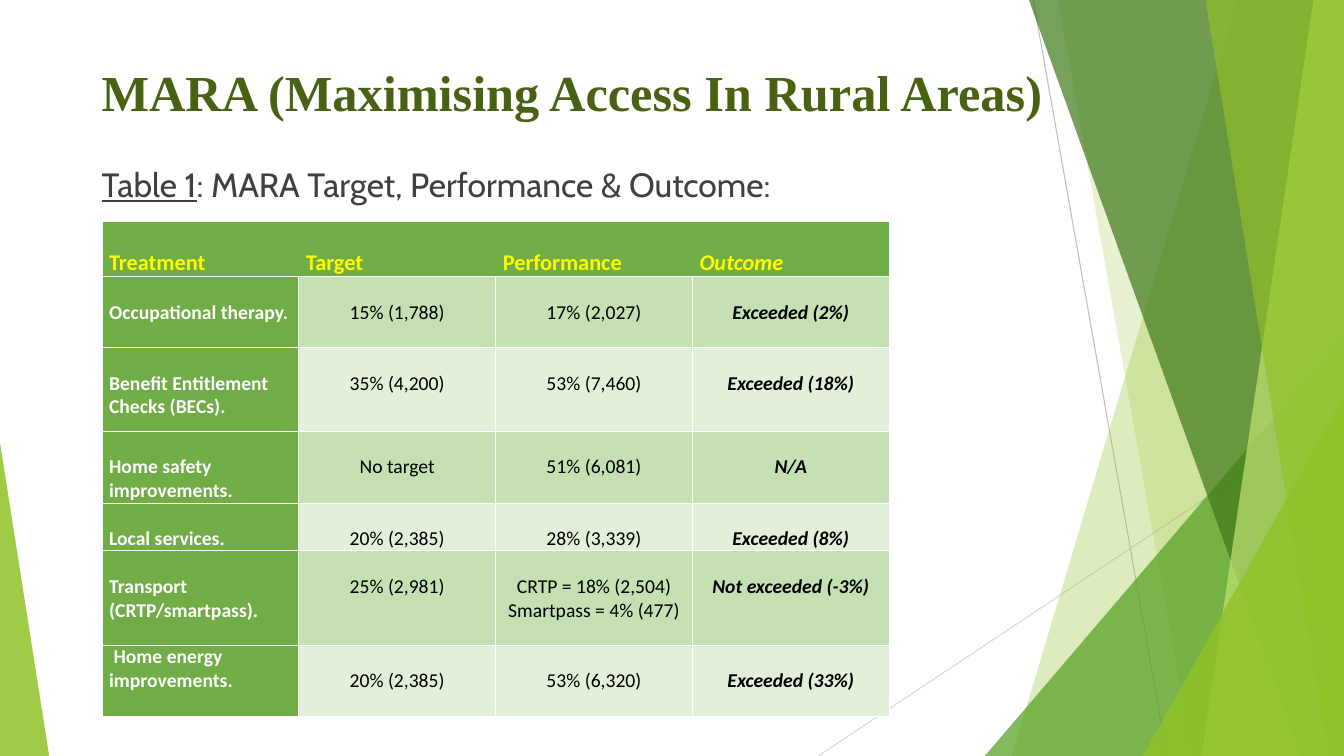
from lxml.etree import SubElement
from pptx import Presentation
from pptx.dml.color import RGBColor
from pptx.enum.shapes import MSO_CONNECTOR as Connector, MSO_SHAPE as Shape
from pptx.enum.text import PP_ALIGN as Align
from pptx.oxml.ns import qn
from pptx.util import Cm, Pt

WIDTH, HEIGHT = 33.87, 19.05
LIME, GREEN, FOREST, PALE = "90C226", "54A021", "3F7819", "C0E474"
LABEL_FILL, BAND_FILLS = "70AD47", ("C5E0B3", "E2EFD9")

HEADINGS = ["Treatment", "Target", "Performance", "Outcome"]
RESULTS = [
    ["Occupational therapy.", "15% (1,788)", "17% (2,027)", "Exceeded (2%)"],
    ["Benefit Entitlement Checks (BECs).", "35% (4,200)", "53% (7,460)", "Exceeded (18%)"],
    ["Home safety improvements.", "No target", "51% (6,081)", "N/A"],
    ["Local services.", "20% (2,385)", "28% (3,339)", "Exceeded (8%)"],
    ["Transport (CRTP/smartpass).", "25% (2,981)",
     "CRTP = 18% (2,504)\nSmartpass = 4% (477)", "Not exceeded (-3%)"],
    [" Home energy improvements.", "20% (2,385)", "53% (6,320)", "Exceeded (33%)"],
]
ROW_HEIGHTS = [1.38, 1.79, 2.11, 1.81, 1.2, 2.38, 1.79]
COLUMN_WIDTH = 4.96


def colour(hex_code):
    return RGBColor.from_string(hex_code)


def write(paragraph, text, size, font, hex_code, bold=False, italic=False, underline=False):
    run = paragraph.add_run()
    run.text = text
    run.font.size, run.font.name = Pt(size), font
    run.font.bold, run.font.italic, run.font.underline = bold, italic, underline
    run.font.color.rgb = colour(hex_code)


def add_text_area(slide, left, top, width, height, margin_top):
    frame = slide.shapes.add_textbox(Cm(left), Cm(top), Cm(width), Cm(height)).text_frame
    frame.word_wrap = True
    frame.margin_top = Cm(margin_top)
    return frame.paragraphs[0]


def paint(facet, hex_code, opacity):
    facet.shadow.inherit = False
    facet.line.fill.background()
    facet.fill.solid()
    facet.fill.fore_color.rgb = colour(hex_code)
    tint = facet.fill._xPr.find(qn("a:solidFill"))[0]
    SubElement(tint, qn("a:alpha"), val=str(opacity * 1000))


def add_band(slide, top_x, bottom_x, hex_code, opacity):
    """Full-height facet from a slanted left edge to the slide's right edge."""
    outline = slide.shapes.build_freeform(Cm(top_x), 0)
    corners = [(WIDTH, 0), (WIDTH, HEIGHT), (bottom_x, HEIGHT)]
    outline.add_line_segments([(Cm(x), Cm(y)) for x, y in corners], close=True)
    paint(outline.convert_to_shape(), hex_code, opacity)


def add_corner(slide, left, top, width, peak, hex_code, opacity):
    """Triangle standing on the slide's bottom edge."""
    corner = slide.shapes.add_shape(
        Shape.ISOSCELES_TRIANGLE, Cm(left), Cm(top), Cm(width), Cm(HEIGHT - top))
    corner.adjustments[0] = peak
    paint(corner, hex_code, opacity)


def add_hairline(slide, start_x, start_y, end_x, end_y, hex_code):
    hairline = slide.shapes.add_connector(
        Connector.STRAIGHT, Cm(start_x), Cm(start_y), Cm(end_x), Cm(end_y))
    hairline.line.width = Pt(0.75)
    hairline.line.color.rgb = colour(hex_code)
    SubElement(hairline._element.spPr, qn("a:effectLst"))


def set_borders(cell, hidden):
    properties = cell._tc.get_or_add_tcPr()
    for position, side in enumerate(("lnL", "lnR", "lnT", "lnB")):
        border = SubElement(properties, qn(f"a:{side}"), w=str(Pt(1)))
        properties.insert(position, border)
        if side in hidden:
            SubElement(border, qn("a:noFill"))
        else:
            SubElement(SubElement(border, qn("a:solidFill")), qn("a:srgbClr"), val="FFFFFF")


def fill_cell(cell, text, fill, margin_top, align, **text_format):
    cell.fill.solid()
    cell.fill.fore_color.rgb = colour(fill)
    cell.margin_left = cell.margin_right = Cm(0.18)
    cell.margin_top, cell.margin_bottom = Cm(margin_top), 0
    for index, line in enumerate(text.split("\n")):
        frame = cell.text_frame
        paragraph = frame.add_paragraph() if index else frame.paragraphs[0]
        paragraph.alignment = align
        write(paragraph, line, font="Calibri", **text_format)


def add_results(slide):
    rows, columns = len(RESULTS) + 1, len(HEADINGS)
    results = slide.shapes.add_table(
        rows, columns, Cm(2.57), Cm(5.59),
        Cm(COLUMN_WIDTH * columns), Cm(sum(ROW_HEIGHTS))).table
    results.first_row = results.horz_banding = False
    for column in results.columns:
        column.width = Cm(COLUMN_WIDTH)
    for row, height in zip(results.rows, ROW_HEIGHTS):
        row.height = Cm(height)

    # Heading row, without lines between its cells
    for c, heading in enumerate(HEADINGS):
        cell = results.cell(0, c)
        fill_cell(cell, heading, LABEL_FILL, 0.69, Align.LEFT, size=16,
                  hex_code="FFFF00", bold=True, italic=heading == "Outcome")
        hidden = [side for side, inner in (("lnL", c > 0), ("lnR", c < columns - 1)) if inner]
        set_borders(cell, hidden)

    # Treatment labels and their banded values
    for r, result in enumerate(RESULTS, 1):
        for c, text in enumerate(result):
            cell = results.cell(r, c)
            is_label, is_outcome = c == 0, c == columns - 1
            fill_cell(cell, text,
                      fill=LABEL_FILL if is_label else BAND_FILLS[(r - 1) % 2],
                      margin_top=0 if is_label and r == len(RESULTS) else 0.6,
                      align=Align.LEFT if is_label else Align.CENTER, size=14,
                      hex_code="FFFFFF" if is_label else "000000",
                      bold=is_label or is_outcome, italic=is_outcome)
            set_borders(cell, hidden=[])


def main():
    deck = Presentation()
    deck.slide_width, deck.slide_height = Cm(WIDTH), Cm(HEIGHT)
    slide = deck.slides.add_slide(deck.slide_layouts[6])

    # Faceted backdrop
    add_hairline(slide, 26.04, 0, 29.41, HEIGHT, "BFBFBF")
    add_hairline(slide, WIDTH, 10.24, 20.62, HEIGHT, "D9D9D9")
    add_band(slide, 31.19, 25.5, LIME, 30)
    add_band(slide, 26.67, 30.05, LIME, 20)
    add_corner(slide, 24.82, 8.46, 9.05, 1, GREEN, 72)
    add_band(slide, 25.93, 32.79, FOREST, 70)
    add_band(slide, 33.1, 30.28, PALE, 70)
    add_band(slide, 30.38, 33.48, LIME, 65)
    add_corner(slide, 28.8, 9.98, 5.07, 1, LIME, 80)
    add_corner(slide, 0, 11.15, 1.24, 0, LIME, 85)

    # Title and table caption
    title = add_text_area(slide, 2.31, 1.3, 24.59, 2.34, margin_top=0.25)
    write(title, "MARA (Maximising Access In Rural Areas)", size=36,
          font="Times New Roman", hex_code="486113", bold=True)
    caption = add_text_area(slide, 2.31, 4.01, 25.45, 12.07, margin_top=0.13)
    caption_format = dict(size=24, font="Cabin", hex_code="404040")
    write(caption, "Table 1", underline=True, **caption_format)
    write(caption, ": MARA Target, Performance & Outcome:", **caption_format)

    add_results(slide)
    deck.save("out.pptx")


if __name__ == "__main__":
    main()
